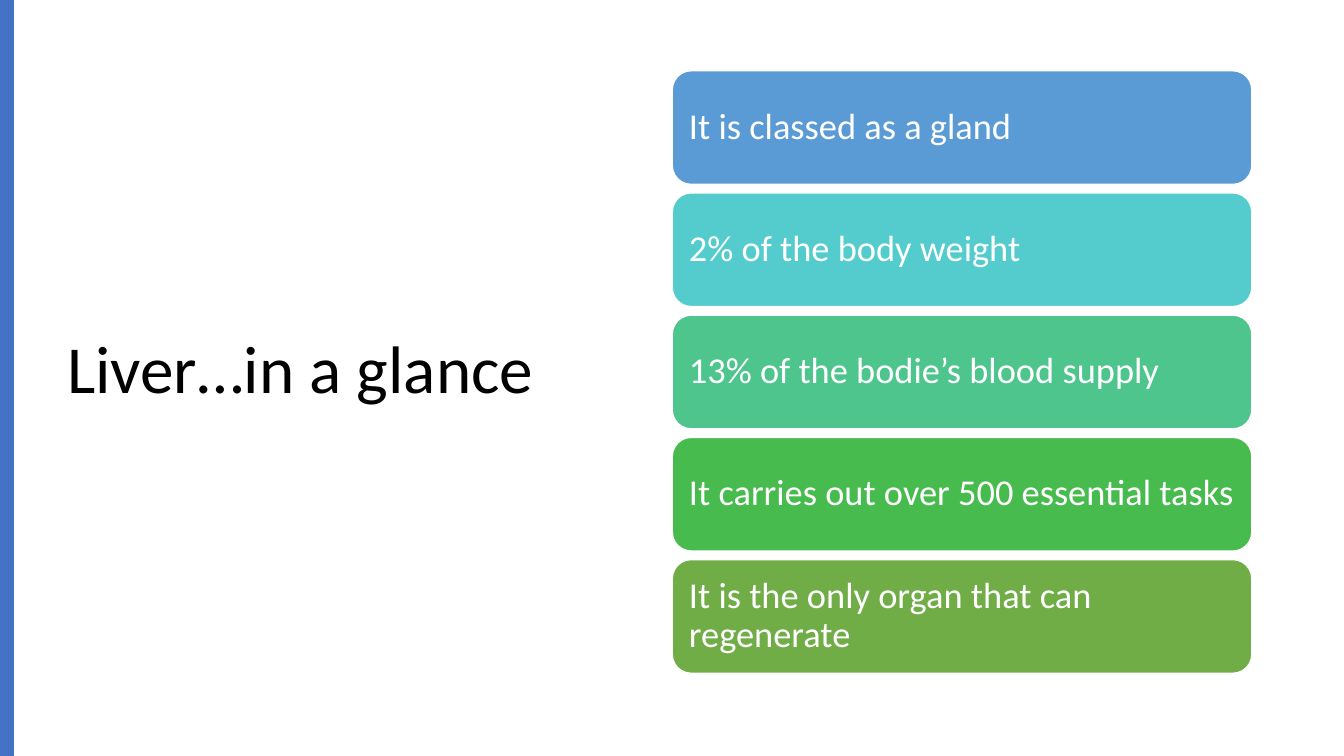
"""Build the slide that sums up the liver in five facts."""
from pptx import Presentation
from pptx.dml.color import RGBColor
from pptx.enum.shapes import MSO_SHAPE as Shape
from pptx.enum.text import MSO_ANCHOR as Anchor, PP_ALIGN as Align
from pptx.util import Pt

FACTS = [
    ("It is classed as a gland", "5B9BD5"),
    ("2% of the body weight", "54CCCD"),
    ("13% of the bodie’s blood supply", "4DC58D"),
    ("It carries out over 500 essential tasks", "48BB4F"),
    ("It is the only organ that can regenerate", "70AD47"),
]
CARD_TOP = 50.5
CARD_PITCH = 87.3


def color(value):
    return RGBColor.from_string(value)


class SlideBuilder:
    font = "Calibri"
    white = "FFFFFF"
    black = "000000"
    accent = "4472C4"

    def __init__(self, slide):
        self.slide = slide

    def set_text(self, shape, text, size, text_color):
        frame = shape.text_frame
        frame.text = text
        frame.word_wrap = True
        frame.vertical_anchor = Anchor.MIDDLE
        paragraph = frame.paragraphs[0]
        paragraph.alignment = Align.LEFT
        paragraph.line_spacing = 0.9
        font = paragraph.runs[0].font
        font.name = self.font
        font.size = Pt(size)
        font.color.rgb = color(text_color)

    def block(self, kind, left, top, width, height, fill):
        shape = self.slide.shapes.add_shape(
            kind, Pt(left), Pt(top), Pt(width), Pt(height))
        shape.shadow.inherit = False
        shape.fill.solid()
        shape.fill.fore_color.rgb = color(fill)
        shape.line.fill.background()
        return shape

    def title(self, text):
        box = self.slide.shapes.add_textbox(Pt(41), Pt(49), Pt(408), Pt(433.4))
        self.set_text(box, text, 48, self.black)

    def side_bar(self):
        self.block(Shape.RECTANGLE, 0, 0, 10, 540, self.accent)

    def card(self, top, text, fill):
        card = self.block(Shape.ROUNDED_RECTANGLE, 480.2, top, 414, 81.2, fill)
        card.line.color.rgb = color(self.white)
        card.line.width = Pt(1)
        frame = card.text_frame
        frame.margin_left = frame.margin_right = Pt(8)
        frame.margin_top = frame.margin_bottom = Pt(8)
        self.set_text(card, text, 26, self.white)


def main():
    presentation = Presentation()
    presentation.slide_width = Pt(960)
    presentation.slide_height = Pt(540)
    slide = presentation.slides.add_slide(presentation.slide_layouts[6])
    builder = SlideBuilder(slide)
    builder.title("Liver…in a glance")
    builder.side_bar()
    for index, (text, fill) in enumerate(FACTS):
        builder.card(CARD_TOP + index * CARD_PITCH, text, fill)
    presentation.save("out.pptx")


if __name__ == "__main__":
    main()
